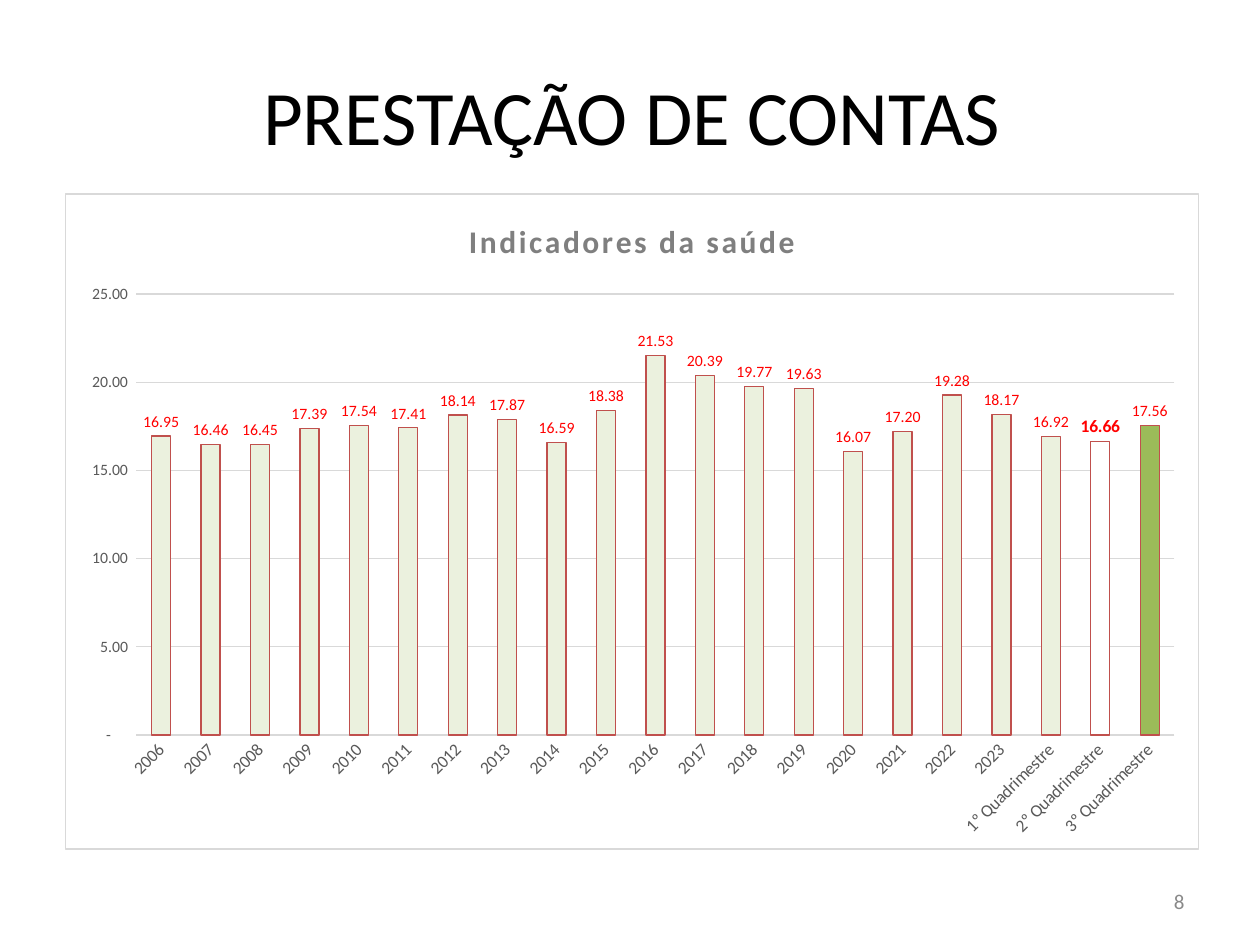
from dataclasses import dataclass
from typing import Optional

from lxml import etree
from pptx import Presentation
from pptx import util as u
from pptx.chart.data import CategoryChartData
from pptx.dml.color import RGBColor
from pptx.enum import chart as ch, text as t
from pptx.oxml import parse_xml
from pptx.oxml.ns import nsdecls, qn

BLACK = RGBColor(0x00, 0x00, 0x00)
WHITE = RGBColor(0xFF, 0xFF, 0xFF)
PAGE_GRAY = RGBColor(0x89, 0x89, 0x89)
TITLE_GRAY = RGBColor(0x7F, 0x7F, 0x7F)
AXIS_GRAY = RGBColor(0x59, 0x59, 0x59)
GRID_GRAY = RGBColor(0xD9, 0xD9, 0xD9)
RED = RGBColor(0xFF, 0x00, 0x00)
BAR_EDGE = RGBColor(0xC0, 0x50, 0x4D)
PALE_GREEN = RGBColor(0xEB, 0xF1, 0xDE)
GREEN = RGBColor(0x9B, 0xBB, 0x59)

FONT = "Calibri"
NUMBER_FORMAT = '_(* #,##0.00_);_(* \\(#,##0.00\\);_(* "-"??_);_(@_)'
YEARS = [str(year) for year in range(2006, 2024)]
TERMS = [f"{number}º Quadrimestre" for number in range(1, 4)]
VALUES = [
    16.95, 16.46, 16.45, 17.39, 17.54, 17.41, 18.14, 17.87, 16.59, 18.38, 21.53,
    20.39, 19.77, 19.63, 16.07, 17.20, 19.28, 18.17, 16.92, 16.66, 17.56,
]
SECOND_TERM, THIRD_TERM = 19, 20


@dataclass(frozen=True)
class Area:
    left: float
    top: float
    width: float
    height: float

    def lengths(self) -> tuple:
        return tuple(map(u.Cm, (self.left, self.top, self.width, self.height)))


@dataclass(frozen=True)
class Label:
    words: str
    area: Area
    size: float
    color: RGBColor
    align: t.PP_ALIGN
    fill: Optional[RGBColor] = None


LABELS = [
    Label("PRESTAÇÃO DE CONTAS", Area(1.31, 0.72, 22.86, 3.18), 44, BLACK,
          t.PP_ALIGN.CENTER, WHITE),
    Label("8", Area(18.2, 17.66, 5.93, 1.01), 12, PAGE_GRAY, t.PP_ALIGN.RIGHT),
]
CHART_AREA = Area(1.31, 3.9, 22.86, 13.23)
PLOT_AREA = Area(1.43, 2.02, 20.95, 8.91)


def style_font(font, size: float, color: RGBColor, bold: bool = False) -> None:
    font.name = FONT
    font.size = u.Pt(size)
    font.bold = bold
    font.color.rgb = color


def paint(part, fill: RGBColor) -> None:
    part.fill.solid()
    part.fill.fore_color.rgb = fill
    part.line.color.rgb = BAR_EDGE
    part.line.width = u.Pt(0.75)


def add_label(page, label: Label) -> None:
    box = page.shapes.add_textbox(*label.area.lengths())
    if label.fill is not None:
        box.fill.solid()
        box.fill.fore_color.rgb = label.fill
    frame = box.text_frame
    frame.word_wrap = True
    frame.vertical_anchor = t.MSO_ANCHOR.MIDDLE
    para = frame.paragraphs[0]
    para.alignment = label.align
    span = para.add_run()
    span.text = label.words
    style_font(span.font, label.size, label.color)


def frame_chart(chart, area: Area, plot: Area) -> None:
    space = chart._chartSpace
    space.find(qn("c:chart")).addnext(parse_xml(
        f'<c:spPr {nsdecls("c", "a")}>'
        f'<a:solidFill><a:srgbClr val="{WHITE}"/></a:solidFill>'
        f'<a:ln w="{u.Pt(0.75)}"><a:solidFill><a:srgbClr val="{GRID_GRAY}"/>'
        '</a:solidFill></a:ln></c:spPr>'
    ))
    plot_area = space.find(f'{qn("c:chart")}/{qn("c:plotArea")}')
    for old_layout in plot_area.findall(qn("c:layout")):
        plot_area.remove(old_layout)
    layout = etree.Element(qn("c:layout"))
    manual = etree.SubElement(layout, qn("c:manualLayout"))
    settings = {
        "layoutTarget": "inner", "xMode": "edge", "yMode": "edge",
        "x": plot.left / area.width, "y": plot.top / area.height,
        "w": plot.width / area.width, "h": plot.height / area.height,
    }
    for name, value in settings.items():
        etree.SubElement(manual, qn(f"c:{name}")).set("val", str(value))
    plot_area.insert(0, layout)


def style_axes(chart) -> None:
    for axis, size in ((chart.category_axis, 10), (chart.value_axis, 9)):
        axis.major_tick_mark = axis.minor_tick_mark = ch.XL_TICK_MARK.NONE
        style_font(axis.tick_labels.font, size, AXIS_GRAY)
        axis.format.line.fill.background()
    chart.category_axis._element.txPr.find(qn("a:bodyPr")).set("rot", "-2700000")
    values = chart.value_axis
    values.minimum_scale, values.maximum_scale, values.major_unit = 0, 25, 5
    values.tick_labels.number_format = NUMBER_FORMAT
    values.tick_labels.number_format_is_linked = False
    values.major_gridlines.format.line.color.rgb = GRID_GRAY
    values.major_gridlines.format.line.width = u.Pt(0.75)


def add_health_chart(page, area: Area) -> None:
    data = CategoryChartData(number_format=NUMBER_FORMAT)
    data.categories = YEARS + TERMS
    data.add_series("Series 1", VALUES)
    chart = page.shapes.add_chart(
        ch.XL_CHART_TYPE.COLUMN_CLUSTERED, *area.lengths(), data
    ).chart
    style_font(chart.font, 10, BLACK)
    chart.has_legend = False
    chart.has_title = True
    span = chart.chart_title.text_frame.paragraphs[0].add_run()
    span.text = "Indicadores da saúde"
    style_font(span.font, 18, TITLE_GRAY, bold=True)
    span._r.get_or_add_rPr().set("spc", "150")
    frame_chart(chart, area, PLOT_AREA)
    style_axes(chart)

    plot = chart.plots[0]
    plot.gap_width = 160
    plot.vary_by_categories = False
    series = plot.series[0]
    paint(series.format, PALE_GREEN)
    for index, fill in ((SECOND_TERM, WHITE), (THIRD_TERM, GREEN)):
        paint(series.points[index].format, fill)

    labels = series.data_labels
    labels.show_value = True
    labels.number_format = NUMBER_FORMAT
    labels.number_format_is_linked = False
    labels.position = ch.XL_LABEL_POSITION.OUTSIDE_END
    style_font(labels.font, 9, RED)
    highlight = series.points[SECOND_TERM].data_label
    style_font(highlight.font, 10, RED, bold=True)
    highlight.position = ch.XL_LABEL_POSITION.OUTSIDE_END


def main() -> None:
    deck = Presentation()
    deck.slide_width, deck.slide_height = u.Cm(25.4), u.Cm(19.05)
    page = deck.slides.add_slide(deck.slide_layouts[6])
    for label in LABELS:
        add_label(page, label)
    add_health_chart(page, CHART_AREA)
    deck.save("out.pptx")


if __name__ == "__main__":
    main()
